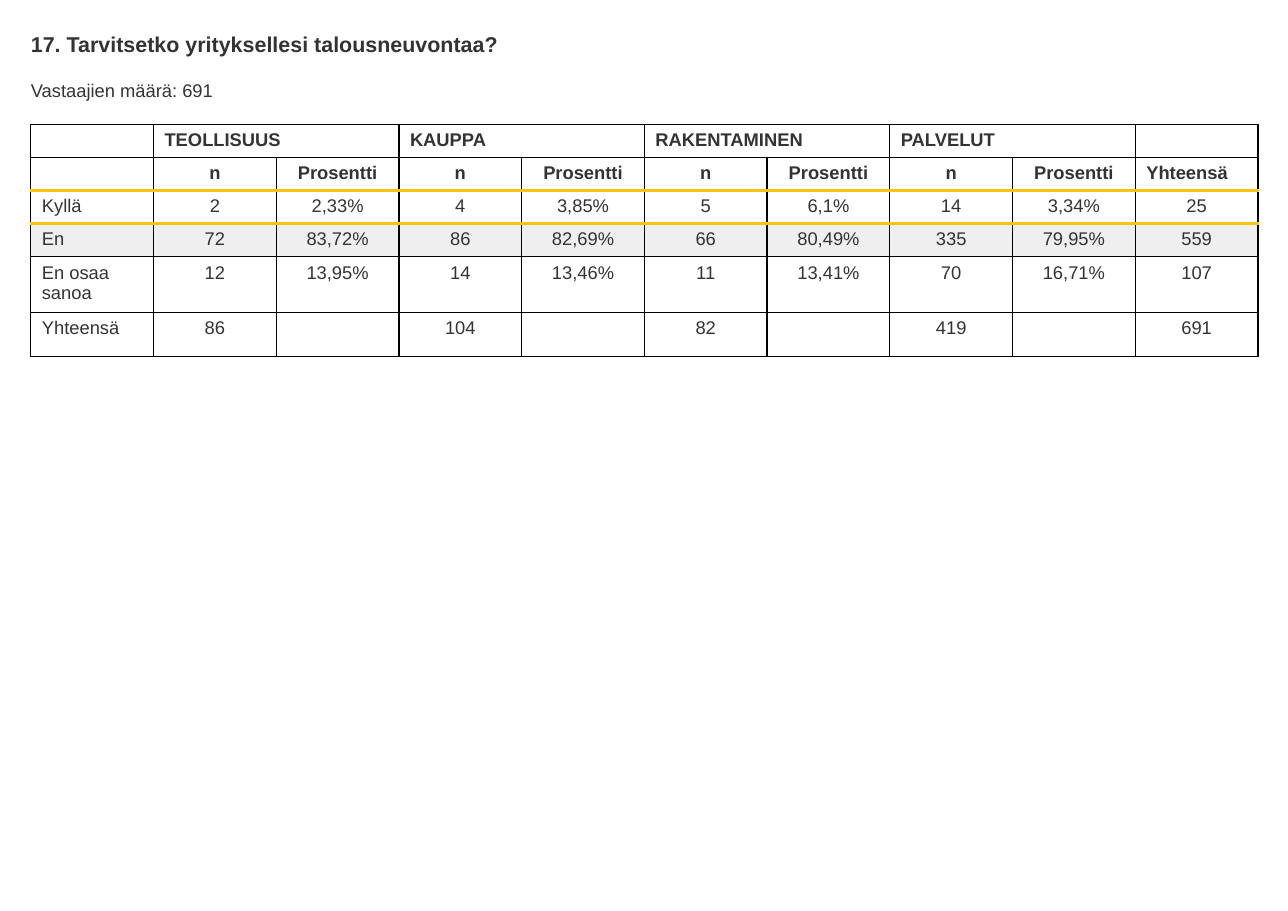
from dataclasses import dataclass

from lxml import etree
from pptx import Presentation
from pptx.dml.color import RGBColor
from pptx.enum.text import PP_ALIGN
from pptx.oxml.ns import qn
from pptx.util import Pt

LEFT, CENTER = PP_ALIGN.LEFT, PP_ALIGN.CENTER
FONT = "Arial"
COLORS = {
    "text": "333333",
    "grid": "000000",
    "accent": "FFC311",
    "band": "EFEFEF",
    "paper": "FFFFFF",
}
MARGIN = 20.16
TABLE_TOP = 81.36
COLUMN_WIDTH = 80.2
CELL_SIZE = 12
SECTORS = ["TEOLLISUUS", "KAUPPA", "RAKENTAMINEN", "PALVELUT"]
ACCENT_EDGES = (2, 3)  # horizontal rules, counted from the table's top edge


@dataclass(frozen=True)
class Heading:
    text: str
    top: float
    height: float
    size: float
    bold: bool


@dataclass(frozen=True)
class Row:
    texts: list[str]
    height: float = 21.6
    bold: bool = False
    fill: str = "paper"


HEADINGS = [
    Heading("17. Tarvitsetko yrityksellesi talousneuvontaa?", 20.16, 16.56, 14, True),
    Heading("Vastaajien määrä: 691", 51.84, 14.4, 12, False),
]
ROWS = [
    Row(["", *(text for sector in SECTORS for text in (sector, "")), ""], bold=True),
    Row(["", *["n", "Prosentti"] * len(SECTORS), "Yhteensä"], bold=True),
    Row(["Kyllä", "2", "2,33%", "4", "3,85%", "5", "6,1%", "14", "3,34%", "25"]),
    Row(["En", "72", "83,72%", "86", "82,69%", "66", "80,49%", "335", "79,95%", "559"],
        fill="band"),
    Row(["En osaa sanoa", "12", "13,95%", "14", "13,46%", "11", "13,41%", "70",
         "16,71%", "107"], height=36.3),
    Row(["Yhteensä", "86", "", "104", "", "82", "", "419", "", "691"], height=28.8),
]


def add_span(para, text: str, size: float, bold: bool) -> None:
    span = para.add_run()
    span.text = text
    span.font.name = FONT
    span.font.size = Pt(size)
    span.font.bold = bold
    span.font.color.rgb = RGBColor.from_string(COLORS["text"])


def add_heading(page, heading: Heading) -> None:
    box = page.shapes.add_textbox(
        Pt(MARGIN), Pt(heading.top), Pt(10 * COLUMN_WIDTH), Pt(heading.height))
    frame = box.text_frame
    frame.word_wrap = True
    frame.margin_left = frame.margin_right = frame.margin_top = frame.margin_bottom = 0
    add_span(frame.paragraphs[0], heading.text, heading.size, heading.bold)


def add_border(cell, side: str, color: str, width: float) -> None:
    properties = cell._tc.get_or_add_tcPr()
    line = etree.SubElement(properties, qn(f"a:ln{side}"), w=str(Pt(width)))
    fill = etree.SubElement(line, qn("a:solidFill"))
    etree.SubElement(fill, qn("a:srgbClr"), val=COLORS[color])


def draw_borders(cell, row_index: int) -> None:
    for side in "LR":
        add_border(cell, side, "grid", 1)
    for side, edge in (("T", row_index), ("B", row_index + 1)):
        if edge in ACCENT_EDGES:
            add_border(cell, side, "accent", 2)
        else:
            add_border(cell, side, "grid", 1)


def fill_cell(cell, row: Row, row_index: int, column_index: int) -> None:
    draw_borders(cell, row_index)
    cell.fill.solid()
    cell.fill.fore_color.rgb = RGBColor.from_string(COLORS[row.fill])
    para = cell.text_frame.paragraphs[0]
    text = row.texts[column_index]
    if not text:
        # An empty cell takes its line height from the end-of-paragraph size.
        etree.SubElement(para._p, qn("a:endParaRPr"), sz=str(CELL_SIZE * 100))
        return
    is_label = column_index == 0 or row_index == 0 or (row.bold and text == "Yhteensä")
    para.alignment = LEFT if is_label else CENTER
    add_span(para, text, CELL_SIZE, row.bold)


def add_answer_table(page) -> None:
    column_count = len(ROWS[0].texts)
    frame = page.shapes.add_table(
        len(ROWS), column_count, Pt(MARGIN), Pt(TABLE_TOP),
        Pt(column_count * COLUMN_WIDTH), Pt(sum(row.height for row in ROWS)))
    table = frame.table
    table.first_row = table.horz_banding = False
    for column in table.columns:
        column.width = Pt(COLUMN_WIDTH)
    for row_index, row in enumerate(ROWS):
        table.rows[row_index].height = Pt(row.height)
        for column_index in range(column_count):
            fill_cell(table.cell(row_index, column_index), row, row_index, column_index)
    for first in range(1, column_count - 1, 2):
        table.cell(0, first).merge(table.cell(0, first + 1))


def main() -> None:
    deck = Presentation()
    deck.slide_width, deck.slide_height = Pt(841.68), Pt(595.44)
    page = deck.slides.add_slide(deck.slide_layouts[6])
    for heading in HEADINGS:
        add_heading(page, heading)
    add_answer_table(page)
    deck.save("out.pptx")


if __name__ == "__main__":
    main()
